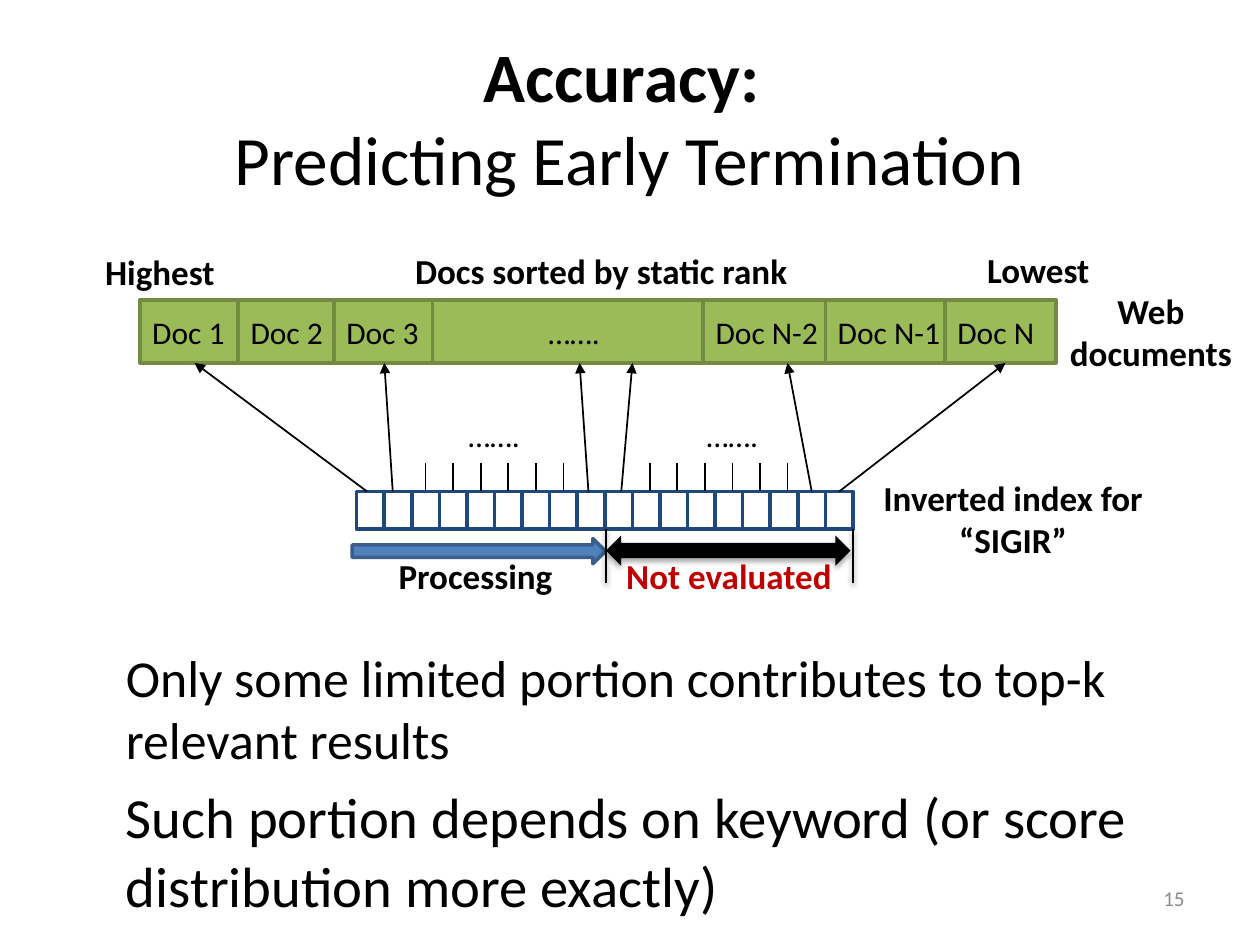
from dataclasses import dataclass

from lxml.etree import SubElement
from pptx import Presentation
from pptx.dml.color import RGBColor
from pptx.enum.shapes import MSO_CONNECTOR as Connector, MSO_SHAPE as Preset
from pptx.enum.text import MSO_ANCHOR as Anchor, MSO_AUTO_SIZE as AutoSize, PP_ALIGN as Align
from pptx.oxml.ns import qn
from pptx.util import Pt

BLACK = RGBColor(0, 0, 0)
WHITE = RGBColor(0xFF, 0xFF, 0xFF)
GRAY = RGBColor(0x8C, 0x8C, 0x8C)
RED = RGBColor(0xC0, 0, 0)
NAVY = RGBColor(0x1F, 0x49, 0x7D)
BLUE = RGBColor(0x4F, 0x81, 0xBD)
BLUE_EDGE = RGBColor(0x3A, 0x5F, 0x8C)
GREEN = RGBColor(0x9B, 0xBB, 0x59)
GREEN_EDGE = RGBColor(0x73, 0x8A, 0x42)

DOC_TOP, DOC_HEIGHT = 171.4, 36
DOC_BOTTOM = DOC_TOP + DOC_HEIGHT
INDEX_LEFT, INDEX_TOP, INDEX_HEIGHT = 203.8, 280.8, 21.6
INDEX_BOTTOM = INDEX_TOP + INDEX_HEIGHT
CELL_WIDTH, CELL_COUNT = 15.76, 18
TICK_TOP = 264.4
TERMINATION_X, INDEX_RIGHT = 346.3, 487.4


@dataclass
class Box:
    left: float
    top: float
    width: float
    height: float

    def lengths(self):
        return Pt(self.left), Pt(self.top), Pt(self.width), Pt(self.height)


@dataclass
class Doc:
    name: str
    left: float
    width: float
    align: Align = Align.LEFT


@dataclass
class Label:
    text: str
    box: Box
    color: RGBColor = BLACK
    size: float = 20
    bold: bool = True
    align: Align = Align.CENTER


@dataclass
class Pointer:
    cell: int
    nudge: float
    tip_x: float
    doc: int | None = None


DOCS = [
    Doc("Doc 1", 79.9, 62.6),
    Doc("Doc 2", 136.1, 62.6),
    Doc("Doc 3", 190.8, 62.6),
    Doc("…….", 247, 162, Align.CENTER),
    Doc("Doc N-2", 401.8, 77.8),
    Doc("Doc N-1", 471.6, 78.5),
    Doc("Doc N", 540, 63.4),
]
LABELS = [
    Label("Inverted index for “SIGIR”", Box(473.8, 268.6, 210.2, 55.4)),
    Label("Processing", Box(195.8, 313.2, 151.9, 31.7)),
    Label("Not evaluated", Box(344.2, 313.2, 144.7, 31.7), RED),
    Label("Docs sorted by static rank", Box(229, 139, 229, 31.7)),
    Label("Highest", Box(48.2, 139.7, 86.4, 31.7)),
    Label("Lowest", Box(550.1, 138.2, 86.4, 31.7)),
    Label("Web documents", Box(596.5, 162, 122.4, 55.4)),
    Label("…….", Box(260.6, 234, 51.8, 28.8), size=18, bold=False, align=Align.LEFT),
    Label("…….", Box(396.7, 234, 51.8, 28.8), size=18, bold=False, align=Align.LEFT),
    Label("15", Box(516.2, 502.6, 167.8, 24), GRAY, 12, False, Align.RIGHT),
]
POINTERS = [
    Pointer(0, -2, 110.2, doc=0),
    Pointer(1, -3, 219.6),
    Pointer(8, -1.5, 331.2),
    Pointer(9, 1.5, 361.4),
    Pointer(16, 0, 450),
    Pointer(17, 0, 574.6),
]
TICKS = [(cell, 0) for cell in range(2, 8)] + [(cell, 2) for cell in range(10, 16)]


def write(paragraph, text: str, *, size: float, bold=False, color=BLACK, align=Align.LEFT):
    paragraph.alignment = align
    run = paragraph.add_run()
    run.text = text
    run.font.name = "Calibri"
    run.font.size = Pt(size)
    run.font.bold = bold
    run.font.color.rgb = color


def draw_shape(slide, preset, box: Box, fill=None, edge=None):
    shape = slide.shapes.add_shape(preset, *box.lengths())
    shape.shadow.inherit = False
    if fill is None:
        shape.fill.background()
    else:
        shape.fill.solid()
        shape.fill.fore_color.rgb = fill
    if edge is None:
        shape.line.fill.background()
    else:
        shape.line.color.rgb = edge
        shape.line.width = Pt(2)
    return shape


def draw_line(slide, start: tuple, end: tuple, width=1.0, arrow=False):
    line = slide.shapes.add_connector(Connector.STRAIGHT, *(Pt(v) for v in start + end))
    line.line.color.rgb = BLACK
    line.line.width = Pt(width)
    if arrow:
        SubElement(line.line._get_or_add_ln(), qn("a:tailEnd"), type="triangle")
    SubElement(line._element.spPr, qn("a:effectLst"))
    return line


def cast_shadow(shape, opacity: int, distance: float):
    effects = shape._element.spPr.find(qn("a:effectLst"))
    shadow = SubElement(effects, qn("a:outerShdw"), blurRad=str(Pt(3.1)), dist=str(Pt(distance)),
                        dir="5400000", rotWithShape="0")
    tone = SubElement(shadow, qn("a:srgbClr"), val=str(BLACK))
    SubElement(tone, qn("a:alpha"), val=str(opacity * 1000))


def draw_label(slide, label: Label):
    frame = slide.shapes.add_textbox(*label.box.lengths()).text_frame
    frame.word_wrap = True
    write(frame.paragraphs[0], label.text, size=label.size, bold=label.bold,
          color=label.color, align=label.align)


def draw_doc(slide, doc: Doc):
    shape = draw_shape(slide, Preset.RECTANGLE, Box(doc.left, DOC_TOP, doc.width, DOC_HEIGHT),
                       GREEN, GREEN_EDGE)
    shape.text_frame.vertical_anchor = Anchor.MIDDLE
    write(shape.text_frame.paragraphs[0], doc.name, size=18, align=doc.align)
    return shape


def rise_from_cell(slide, cells, cell: int, nudge: float, end: tuple, arrow=False):
    start = INDEX_LEFT + (cell + 0.5) * CELL_WIDTH + nudge, INDEX_TOP
    line = draw_line(slide, start, end, arrow=arrow)
    if not nudge:
        line.begin_connect(cells[cell], 0)
    return line


def draw_heading(slide):
    title = slide.shapes.title
    title.left, title.top, title.width, title.height = Box(23.8, 21.6, 671.8, 90).lengths()
    title.text_frame.auto_size = AutoSize.NONE
    title.text_frame.vertical_anchor = Anchor.MIDDLE
    heading = title.text_frame.paragraphs[0]
    write(heading, "Accuracy: ", size=39.6, bold=True, align=Align.CENTER)
    heading.add_line_break()
    write(heading, "Predicting Early Termination", size=39.6, align=Align.CENTER)


def draw_findings(slide):
    frame = slide.shapes.add_textbox(*Box(64.8, 365.4, 613.4, 162).lengths()).text_frame
    frame.word_wrap = True
    write(frame.paragraphs[0], "Only some limited portion contributes to top-k relevant results",
          size=29.6)
    dependence = frame.add_paragraph()
    dependence.space_before = Pt(7)
    write(dependence, "Such portion depends on keyword (or score distribution more exactly)",
          size=32.4)


def main():
    """Build the early-termination slide."""
    deck = Presentation()
    deck.slide_width, deck.slide_height = Pt(720), Pt(540)
    slide = deck.slides.add_slide(deck.slide_layouts[5])
    draw_heading(slide)
    draw_findings(slide)
    cells = [draw_shape(slide, Preset.RECTANGLE,
                        Box(INDEX_LEFT + i * CELL_WIDTH, INDEX_TOP, CELL_WIDTH, INDEX_HEIGHT),
                        WHITE if i < 2 else None, NAVY) for i in range(CELL_COUNT)]
    processing = draw_shape(slide, Preset.DOWN_ARROW, Box(266.4, 242.6, 14.4, 144.7), BLUE, BLUE_EDGE)
    processing.rotation = 270
    for x in (TERMINATION_X, INDEX_RIGHT):
        cast_shadow(draw_line(slide, (x, INDEX_BOTTOM), (x, 333.4), 1.25), 38, 1.6)
    unevaluated = draw_shape(slide, Preset.LEFT_RIGHT_ARROW, Box(TERMINATION_X, 306, 139.7, 17.3), BLACK)
    cast_shadow(unevaluated, 35, 1.8)
    docs = [draw_doc(slide, doc) for doc in DOCS]
    for label in LABELS:
        draw_label(slide, label)
    for pointer in POINTERS:
        line = rise_from_cell(slide, cells, pointer.cell, pointer.nudge,
                              (pointer.tip_x, DOC_BOTTOM), arrow=True)
        if pointer.doc is not None:
            line.end_connect(docs[pointer.doc], 2)
    for cell, nudge in TICKS:
        x = INDEX_LEFT + (cell + 0.5) * CELL_WIDTH + nudge
        rise_from_cell(slide, cells, cell, nudge, (x, TICK_TOP))
    deck.save("out.pptx")


if __name__ == "__main__":
    main()
